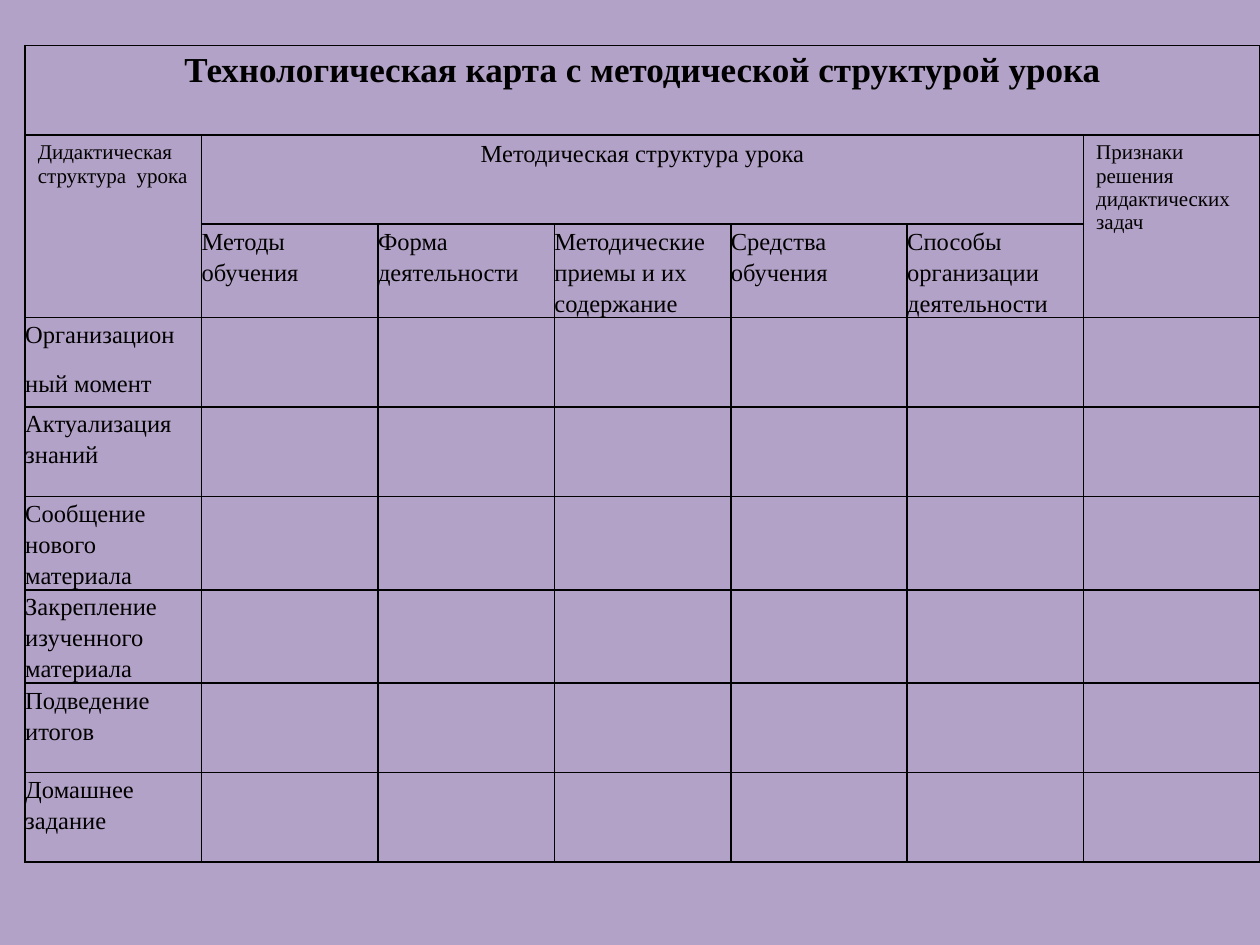
from lxml.etree import SubElement as Sub
from pptx import Presentation
from pptx.dml.color import RGBColor
from pptx.enum.text import PP_ALIGN as Align
from pptx.oxml.ns import qn
from pptx.util import Inches, Pt

FONT = "Times New Roman"
INK = "000000"
BACK = "B3A2C7"
HEADS = [
    "Методы\nобучения",
    "Форма\nдеятельности",
    "Методические\nприемы и их\nсодержание",
    "Средства\nобучения",
    "Способы\nорганизации\nдеятельности",
]
STAGES = [
    ["Организацион", "ный момент"],
    ["Актуализация знаний"],
    ["Сообщение нового материала"],
    ["Закрепление изученного материала"],
    ["Подведение итогов"],
    ["Домашнее задание"],
]


def color(code):
    """Turn a hex string into a colour."""
    return RGBColor.from_string(code)


def frame(cell):
    """Draw thin lines round a cell and leave it unfilled."""
    props = cell._tc.get_or_add_tcPr()
    for side in ("lnL", "lnR", "lnT", "lnB"):
        line = Sub(props, qn(f"a:{side}"), w=str(Pt(1)))
        Sub(Sub(line, qn("a:solidFill")), qn("a:srgbClr"), val=INK)
    cell.fill.background()


def write(cell, lines, size, bold=False, align=Align.LEFT):
    """Write one paragraph per line and return the paragraphs."""
    text = cell.text_frame
    for i, line in enumerate(lines):
        para = text.add_paragraph() if i else text.paragraphs[0]
        para.text = line
        para.alignment = align
        font = para.font
        font.name, font.size, font.bold = FONT, Pt(size), bold
        font.color.rgb = color(INK)
    return text.paragraphs


def label(cell, lines):
    """Write a label without margins and with loose line spacing."""
    cell.margin_left = cell.margin_right = 0
    cell.margin_top = cell.margin_bottom = 0
    for para in write(cell, lines, 14):
        para.line_spacing = 1.15
        para.space_after = Pt(10)


def lesson_table(slide, left, top, width, height):
    """Place the lesson plan table in the given box."""
    rows, cols = len(STAGES) + 3, len(HEADS) + 2
    table = slide.shapes.add_table(rows, cols, left, top, width, height).table
    table.first_row = table.horz_banding = False
    for cell in table.iter_cells():
        frame(cell)

    last = cols - 1
    for start, end in (
        ((0, 0), (0, last)),
        ((1, 0), (2, 0)),
        ((1, 1), (1, last - 1)),
        ((1, last), (2, last)),
    ):
        table.cell(*start).merge(table.cell(*end))

    title = "Технологическая карта с методической структурой урока"
    write(table.cell(0, 0), [title], 20, True, Align.CENTER)
    write(table.cell(1, 0), ["Дидактическая\nструктура  урока"], 12)
    write(table.cell(1, 1), ["Методическая структура урока"], 14, align=Align.CENTER)
    write(table.cell(1, last), ["Признаки\nрешения\nдидактических задач"], 12)
    for col, head in enumerate(HEADS, 1):
        label(table.cell(2, col), [head])
    for row, stage in enumerate(STAGES, 3):
        label(table.cell(row, 0), stage)


def main():
    """Build and save the slide."""
    deck = Presentation()
    deck.slide_width, deck.slide_height = Inches(10), Inches(7.5)
    slide = deck.slides.add_slide(deck.slide_layouts[6])
    fill = slide.background.fill
    fill.solid()
    fill.fore_color.rgb = color(BACK)
    lesson_table(slide, Inches(0.2), Inches(0.36), Inches(9.8), Inches(6.39))
    deck.save("out.pptx")


if __name__ == "__main__":
    main()
